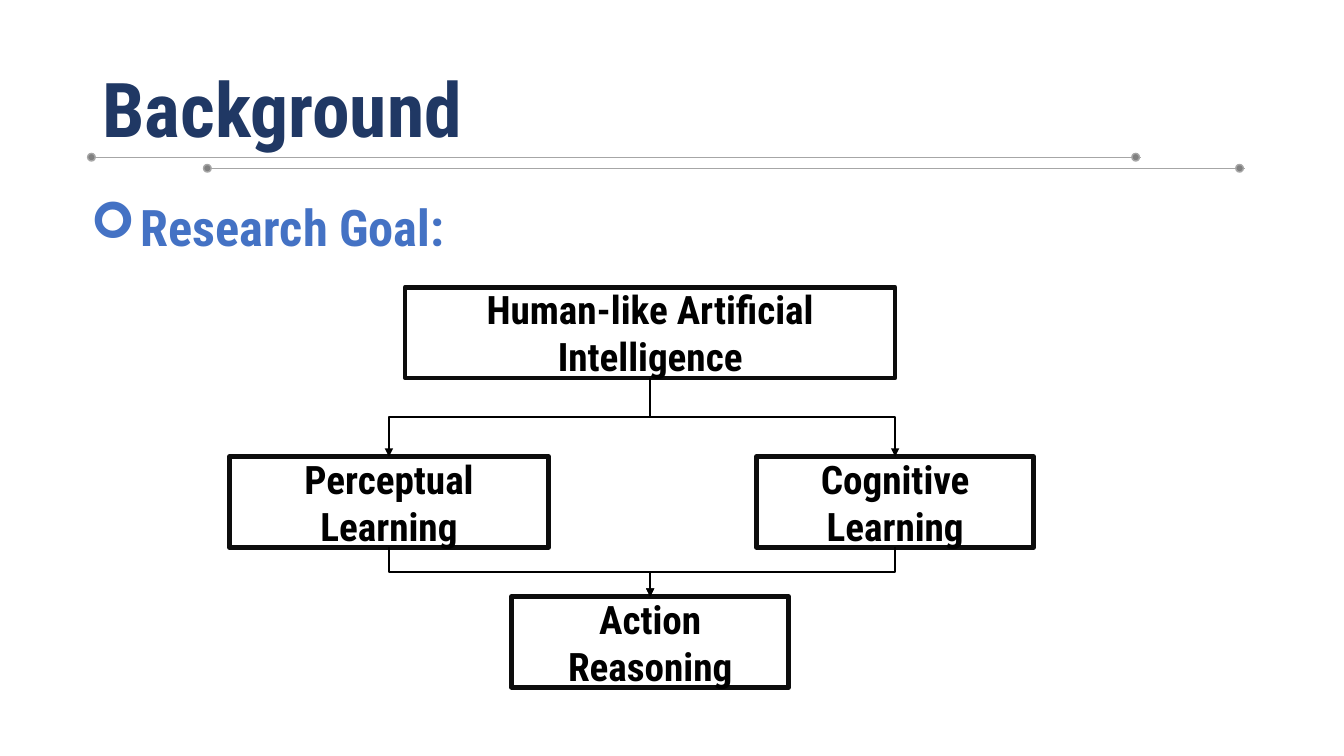
import pptx
import pptx.util
import pptx.dml.color
import pptx.enum.shapes
import pptx.enum.text
import pptx.oxml
import pptx.oxml.ns

Pt = pptx.util.Pt
RGB = pptx.dml.color.RGBColor
SHAPE = pptx.enum.shapes.MSO_SHAPE
CONNECTOR = pptx.enum.shapes.MSO_CONNECTOR
ALIGN = pptx.enum.text.PP_ALIGN
ANCHOR = pptx.enum.text.MSO_ANCHOR

FONT = "Roboto Condensed"
NAVY = RGB(0x20, 0x38, 0x64)
BLUE = RGB(0x44, 0x72, 0xC4)
RULE = RGB(0xA6, 0xA6, 0xA6)
DOT = RGB(0x80, 0x80, 0x80)
BORDER = RGB(0x0D, 0x0D, 0x0D)
BLACK = RGB(0, 0, 0)
WHITE = RGB(0xFF, 0xFF, 0xFF)


def add_run(p, text, size, color):
    """Add a bold run to a paragraph."""
    r = p.add_run()
    r.text = text
    r.font.name = FONT
    r.font.size = Pt(size)
    r.font.bold = True
    r.font.color.rgb = color


def add_shape(s, kind, box, fill, line, weight):
    """Add a filled and outlined shape without a shadow."""
    sp = s.shapes.add_shape(kind, *map(Pt, box))
    sp.shadow.inherit = False
    sp.fill.solid()
    sp.fill.fore_color.rgb = fill
    sp.line.color.rgb = line
    sp.line.width = Pt(weight)
    return sp


def add_line(s, kind, x1, y1, x2, y2, color, weight):
    """Add a connector without a shadow."""
    c = s.shapes.add_connector(kind, *map(Pt, (x1, y1, x2, y2)))
    c.line.color.rgb = color
    c.line.width = Pt(weight)
    c._element.spPr.append(pptx.oxml.parse_xml(
        "<a:effectLst %s/>" % pptx.oxml.ns.nsdecls("a")))
    return c


def add_title(s, left, top, width, height):
    """Place and format the title placeholder."""
    sp = s.shapes.title
    sp.left, sp.top, sp.width, sp.height = map(Pt, (left, top, width, height))
    tf = sp.text_frame
    tf.auto_size = pptx.enum.text.MSO_AUTO_SIZE.NONE
    tf.vertical_anchor = ANCHOR.MIDDLE
    p = tf.paragraphs[0]
    p.alignment = ALIGN.LEFT
    p.line_spacing = 0.9
    add_run(p, "Background", 54, NAVY)


def add_dotted_rule(s, left, y, width):
    """Draw a thin rule with a dot near each end."""
    d = 5.4
    right = left + width
    add_line(s, CONNECTOR.STRAIGHT, left, y, right, y, RULE, 0.5)
    for x in (left - 4.4, right - 6.5):
        add_shape(s, SHAPE.OVAL, (x, y - d / 2, d, d), DOT, RULE, 1)


def add_heading(s, left, top, width, height):
    """Add the section heading with an arrow bullet."""
    tf = s.shapes.add_textbox(*map(Pt, (left, top, width, height))).text_frame
    tf.word_wrap = True
    p = tf.paragraphs[0]
    add_run(p, "Research Goal:", 36, BLUE)
    pPr = p._p.get_or_add_pPr()
    pPr.set("marL", str(Pt(36)))
    pPr.set("indent", str(Pt(-36)))
    ns = pptx.oxml.ns.nsdecls("a")
    pPr.append(pptx.oxml.parse_xml('<a:buFont %s typeface="Wingdings"/>' % ns))
    pPr.append(pptx.oxml.parse_xml('<a:buChar %s char="➢"/>' % ns))


def add_elbow(s, x1, y1, x2, y2):
    """Draw a down-across-down arrow as a turned elbow connector."""
    mx, my = (x1 + x2) / 2, (y1 + y2) / 2
    w, h = abs(x2 - x1) / 2, (y2 - y1) / 2
    turn, side = (90, -1) if x2 < x1 else (270, 1)
    c = add_line(s, CONNECTOR.ELBOW, mx + side * h, my - w,
                 mx - side * h, my + w, BLACK, 1.5)
    xfrm = c._element.spPr.find(pptx.oxml.ns.qn("a:xfrm"))
    xfrm.set("rot", str(turn * 60000))
    c.line._get_or_add_ln().append(pptx.oxml.parse_xml(
        '<a:tailEnd %s type="triangle"/>' % pptx.oxml.ns.nsdecls("a")))


def add_goal_chart(s, left, top, width, height):
    """Draw the goal boxes and the arrows between them."""
    box_h = 64.8
    mid, low, bottom = top, top + 121, top + height - box_h
    goal = (left + 301, mid, 350, "Human-like Artificial Intelligence")
    perceptual = (left + 114.4, low, 228, "Perceptual Learning")
    cognitive = (left + width - 99, low, 198, "Cognitive Learning")
    action = (left + 301, bottom, 198, "Action Reasoning")
    for cx, y, w, text in (goal, perceptual, cognitive, action):
        sp = add_shape(s, SHAPE.RECTANGLE, (cx - w / 2, y, w, box_h),
                       WHITE, BORDER, 3.25)
        tf = sp.text_frame
        tf.word_wrap = True
        tf.vertical_anchor = ANCHOR.MIDDLE
        p = tf.paragraphs[0]
        p.alignment = ALIGN.CENTER
        add_run(p, text, 28, BLACK)
    for start, end in ((goal, perceptual), (goal, cognitive),
                       (perceptual, action), (cognitive, action)):
        add_elbow(s, start[0], start[1] + box_h, end[0], end[1])


def main():
    """Build the slide and save it."""
    prs = pptx.Presentation()
    prs.slide_width, prs.slide_height = Pt(960), Pt(540)
    s = prs.slides.add_slide(prs.slide_layouts[5])
    add_title(s, 66, 28.8, 828, 104.4)
    add_dotted_rule(s, 67, 112.3, 748)
    add_dotted_rule(s, 149.8, 120.2, 739.4)
    add_heading(s, 57.6, 136.8, 831, 51)
    add_goal_chart(s, 163.4, 205.2, 575, 285.8)
    prs.save("out.pptx")


if __name__ == "__main__":
    main()
